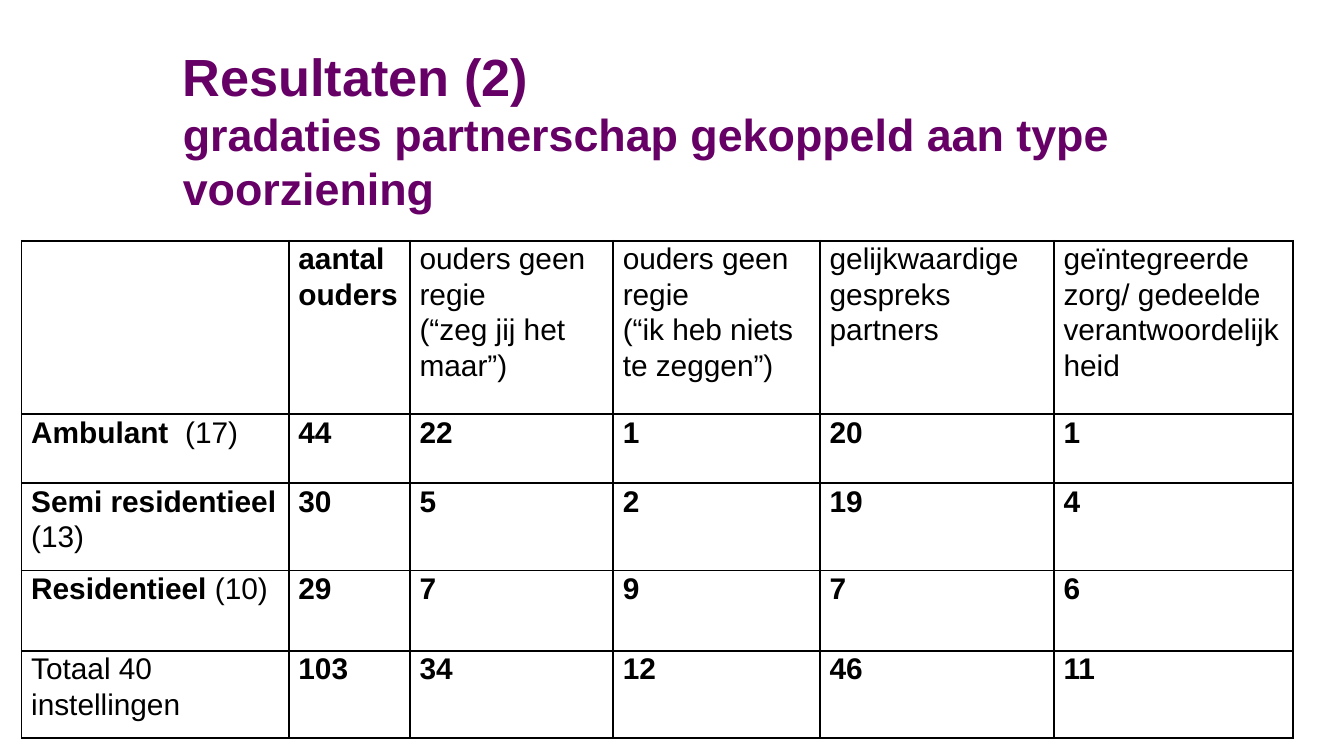
from lxml.etree import SubElement
from pptx import Presentation
from pptx.dml.color import RGBColor
from pptx.enum.text import MSO_ANCHOR as Anchor, MSO_AUTO_SIZE as AutoSize, PP_ALIGN as Align
from pptx.oxml.ns import qn
from pptx.util import Cm, Pt

FONT = "Arial"
PURPLE, BLACK = "660066", "000000"
THIN, THICK = 1, 1.5
COLUMN_WIDTHS = [5.05, 2.29, 3.84, 3.91, 4.42, 4.52]
ROW_HEIGHTS = [3.28, 1.3, 1.65, 1.52, 1.65]

# Column headings: paragraphs, and whether they are bold
HEADINGS = [
    ([], False),
    (["aantal", "ouders"], True),
    (["ouders geen regie", "(“zeg jij het maar”)"], False),
    (["ouders geen regie", "(“ik heb niets te zeggen”)"], False),
    (["gelijkwaardige gespreks", "partners"], False),
    (["geïntegreerde", "zorg/ gedeelde verantwoordelijk", "heid"], False),
]

# Rows: bold label, plain label, then the counts
ROWS = [
    ("Ambulant  ", "(17)", [44, 22, 1, 20, 1]),
    ("Semi residentieel ", "(13)", [30, 5, 2, 19, 4]),
    ("Residentieel ", "(10)", [29, 7, 9, 7, 6]),
    ("", "Totaal 40 instellingen", [103, 34, 12, 46, 11]),
]


def color(hex_string):
    return RGBColor.from_string(hex_string)


def add_run(paragraph, text, size, hex_string, bold):
    run = paragraph.add_run()
    run.text = text
    font = run.font
    font.name, font.size, font.bold = FONT, Pt(size), bold
    font.color.rgb = color(hex_string)


def add_title(slide):
    title = slide.shapes.title
    title.left, title.top, title.width, title.height = Cm(3.2), Cm(0.13), Cm(20.5), Cm(4.62)
    frame = title.text_frame
    frame.word_wrap = True
    frame.auto_size = AutoSize.NONE
    frame.vertical_anchor = Anchor.MIDDLE
    paragraph = frame.paragraphs[0]
    paragraph.alignment = Align.LEFT
    add_run(paragraph, "Resultaten (2) ", 28, PURPLE, True)
    paragraph.add_line_break()
    add_run(paragraph, "gradaties partnerschap gekoppeld aan type voorziening", 24, PURPLE, True)


def set_borders(cell, widths):
    """Draw the left, right, top and bottom borders, in points."""
    properties = cell._tc.get_or_add_tcPr()
    for index, (side, width) in enumerate(zip("LRTB", widths)):
        line = SubElement(properties, qn(f"a:ln{side}"), w=str(Pt(width)))
        fill = SubElement(line, qn("a:solidFill"))
        SubElement(fill, qn("a:srgbClr"), val=BLACK)
        properties.insert(index, line)


def fill_cell(cell, paragraphs):
    """Write paragraphs, each a list of (text, bold) runs."""
    cell.fill.background()
    cell.margin_left = cell.margin_right = Cm(0.18)
    cell.margin_top = cell.margin_bottom = 0
    cell.vertical_anchor = Anchor.TOP
    frame = cell.text_frame
    for index, runs in enumerate(paragraphs):
        paragraph = frame.add_paragraph() if index else frame.paragraphs[0]
        paragraph.line_spacing = 1.07
        for text, bold in runs:
            add_run(paragraph, text, 16, BLACK, bold)
    if not paragraphs:
        frame.paragraphs[0].font.size = Pt(16)


def table_content():
    yield [[[(text, bold)] for text in texts] for texts, bold in HEADINGS]
    for name, note, counts in ROWS:
        label = [(text, bold) for text, bold in ((name, True), (note, False)) if text]
        yield [[label]] + [[[(str(count), True)]] for count in counts]


def add_results_table(slide):
    row_count, column_count = len(ROW_HEIGHTS), len(COLUMN_WIDTHS)
    frame = slide.shapes.add_table(row_count, column_count, Cm(0.41), Cm(4.55),
                                   Cm(sum(COLUMN_WIDTHS)), Cm(sum(ROW_HEIGHTS)))
    table = frame.table
    table.first_row = table.horz_banding = False
    for column, width in zip(table.columns, COLUMN_WIDTHS):
        column.width = Cm(width)
    for row, height in zip(table.rows, ROW_HEIGHTS):
        row.height = Cm(height)

    # Thick rules set off the label column and the total row
    total = row_count - 1
    for r, contents in enumerate(table_content()):
        for c, paragraphs in enumerate(contents):
            cell = table.cell(r, c)
            fill_cell(cell, paragraphs)
            set_borders(cell, (THICK if c == 1 else THIN,
                               THICK if c == 0 else THIN,
                               THICK if r == total else THIN,
                               THICK if r == total - 1 else THIN))


def main():
    presentation = Presentation()
    presentation.slide_width, presentation.slide_height = Cm(25.4), Cm(14.29)
    slide = presentation.slides.add_slide(presentation.slide_layouts[5])
    add_title(slide)
    add_results_table(slide)
    presentation.save("out.pptx")


if __name__ == "__main__":
    main()
